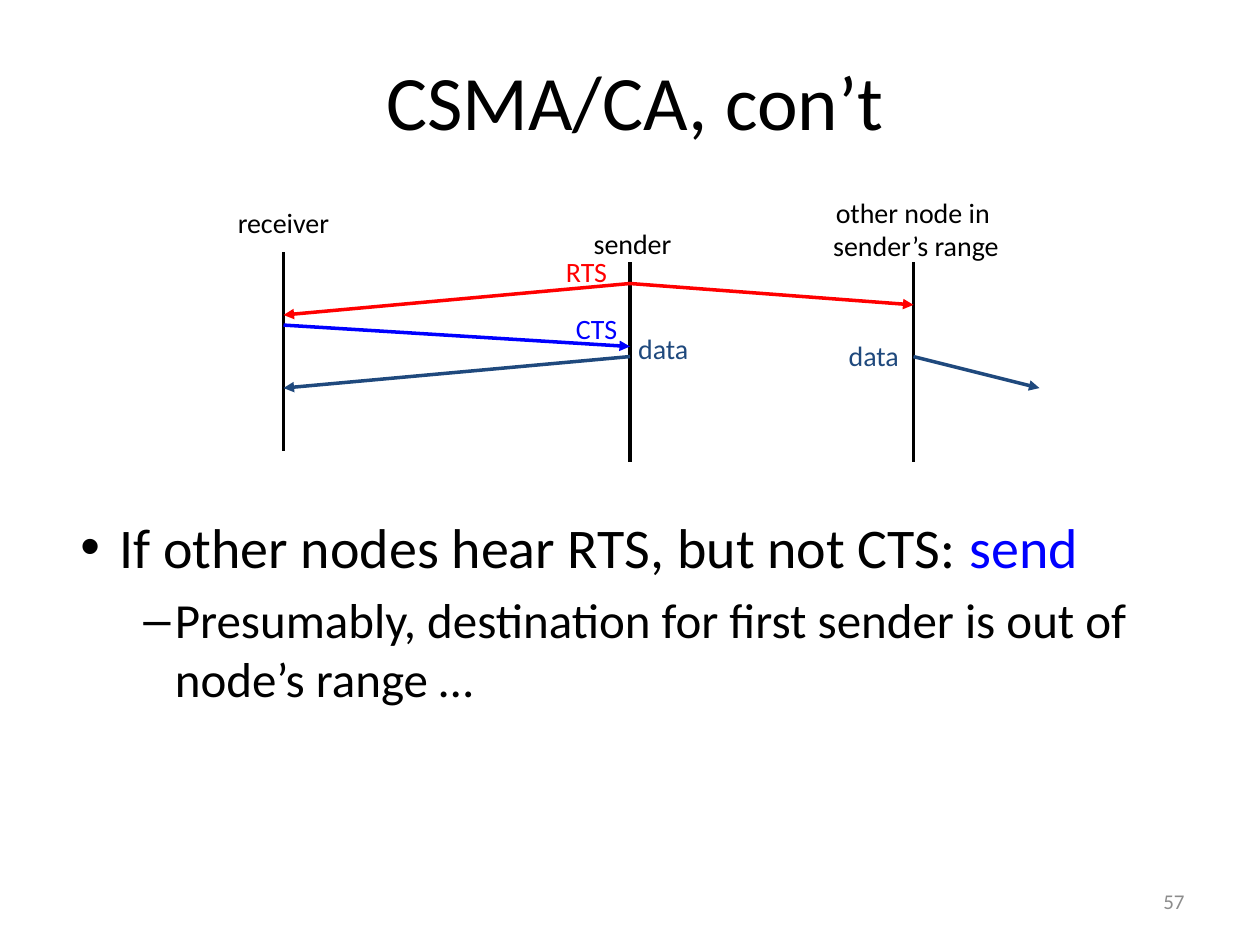
from lxml import etree
from pptx import Presentation
from pptx.dml.color import RGBColor
from pptx.enum.shapes import MSO_CONNECTOR
from pptx.enum.text import MSO_ANCHOR, PP_ALIGN
from pptx.oxml.ns import qn
from pptx.util import Inches, Pt

STRAIGHT = MSO_CONNECTOR.STRAIGHT
TOP, MIDDLE = MSO_ANCHOR.TOP, MSO_ANCHOR.MIDDLE
LEFT, CENTER, RIGHT = PP_ALIGN.LEFT, PP_ALIGN.CENTER, PP_ALIGN.RIGHT
BLACK = RGBColor(0x00, 0x00, 0x00)
RED = RGBColor(0xFF, 0x00, 0x00)
BLUE = RGBColor(0x00, 0x00, 0xFF)
NAVY = RGBColor(0x1F, 0x49, 0x7D)
GRAY = RGBColor(0x8C, 0x8C, 0x8C)
FONT = "Calibri"

TITLE = "CSMA/CA, con’t"
PAGE_NUMBER = "57"
RECEIVER_X, SENDER_X, OTHER_X = 2.25, 5, 7.25
LIFELINES = [(RECEIVER_X, 2, 3.58), (SENDER_X, 2.08, 3.67), (OTHER_X, 2.08, 3.67)]
MESSAGES = [
    ((SENDER_X, 2.25), (OTHER_X, 2.42), RED),
    ((SENDER_X, 2.25), (RECEIVER_X, 2.5), RED),
    ((SENDER_X, 2.83), (RECEIVER_X, 3.08), NAVY),
    ((RECEIVER_X, 2.58), (SENDER_X, 2.75), BLUE),
    ((OTHER_X, 2.83), (8.25, 3.08), NAVY),
]
LABELS = [
    (["sender"], (4.61, 1.75, 0.82, 0.37), BLACK),
    (["receiver"], (1.78, 1.58, 0.94, 0.37), BLACK),
    (["other node in ", "sender’s range"], (6.5, 1.5, 1.54, 0.64), BLACK),
    (["RTS"], (4.39, 1.97, 0.53, 0.37), RED),
    (["data"], (4.95, 2.58, 0.63, 0.36), NAVY),
    (["CTS"], (4.47, 2.42, 0.53, 0.37), BLUE),
    (["data"], (6.62, 2.64, 0.63, 0.36), NAVY),
]
BULLETS = [
    {"runs": [("If other nodes hear RTS, but not CTS: ", BLACK), ("send", BLUE)],
     "size": 32, "level": 0, "indent": 0.31, "hanging": 0.31, "mark": "•"},
    {"runs": [("Presumably, destination for first sender is out of node’s range …", BLACK)],
     "size": 28, "level": 1, "indent": 0.75, "hanging": 0.25, "mark": "–"},
]


def place(shape, box):
    shape.left, shape.top, shape.width, shape.height = map(Inches, box)


def write(paragraph, text, size=16, color=BLACK, align=CENTER):
    paragraph.alignment = align
    run = paragraph.add_run()
    run.text = text
    run.font.name = FONT
    run.font.size = Pt(size)
    run.font.color.rgb = color


def add_text_frame(slide, box, wrap=True, anchor=TOP):
    frame = slide.shapes.add_textbox(*map(Inches, box)).text_frame
    frame.word_wrap = wrap
    frame.vertical_anchor = anchor
    return frame


def next_paragraph(frame, index):
    return frame.add_paragraph() if index else frame.paragraphs[0]


def add_line(slide, start, end, color, arrow=False):
    line = slide.shapes.add_connector(STRAIGHT, *map(Inches, start + end))
    line.line.color.rgb = color
    line.line.width = Pt(2)
    if arrow:
        etree.SubElement(line.line._get_or_add_ln(), qn("a:tailEnd"), type="triangle")
    etree.SubElement(line._element.spPr, qn("a:effectLst"))


def add_bullets(slide, box):
    frame = add_text_frame(slide, box)
    for index, bullet in enumerate(BULLETS):
        paragraph = next_paragraph(frame, index)
        paragraph.level = bullet["level"]
        paragraph.space_before = Pt(bullet["size"] * 0.2)
        for text, color in bullet["runs"]:
            write(paragraph, text, size=bullet["size"], color=color, align=LEFT)
        properties = paragraph._p.get_or_add_pPr()
        properties.set("marL", str(Inches(bullet["indent"])))
        properties.set("indent", str(-Inches(bullet["hanging"])))
        etree.SubElement(properties, qn("a:buFont"), typeface="Arial")
        etree.SubElement(properties, qn("a:buChar"), char=bullet["mark"])


def main():
    presentation = Presentation()
    presentation.slide_width, presentation.slide_height = Inches(10), Inches(7.5)
    slide = presentation.slides.add_slide(presentation.slide_layouts[5])

    title = slide.shapes.title
    place(title, (0.58, 0.33, 8.92, 0.92))
    title.text_frame.vertical_anchor = MIDDLE
    write(title.text_frame.paragraphs[0], TITLE, size=44)

    add_bullets(slide, (0.54, 4.02, 8.68, 2.55))
    for x, top, bottom in LIFELINES:
        add_line(slide, (x, top), (x, bottom), BLACK)
    for start, end, color in MESSAGES:
        add_line(slide, start, end, color, arrow=True)
    for lines, box, color in LABELS:
        frame = add_text_frame(slide, box, wrap=False)
        for index, text in enumerate(lines):
            write(next_paragraph(frame, index), text, color=color)

    number = add_text_frame(slide, (7.17, 6.95, 2.33, 0.4), anchor=MIDDLE)
    write(number.paragraphs[0], PAGE_NUMBER, size=12, color=GRAY, align=RIGHT)
    presentation.save("out.pptx")


if __name__ == "__main__":
    main()
